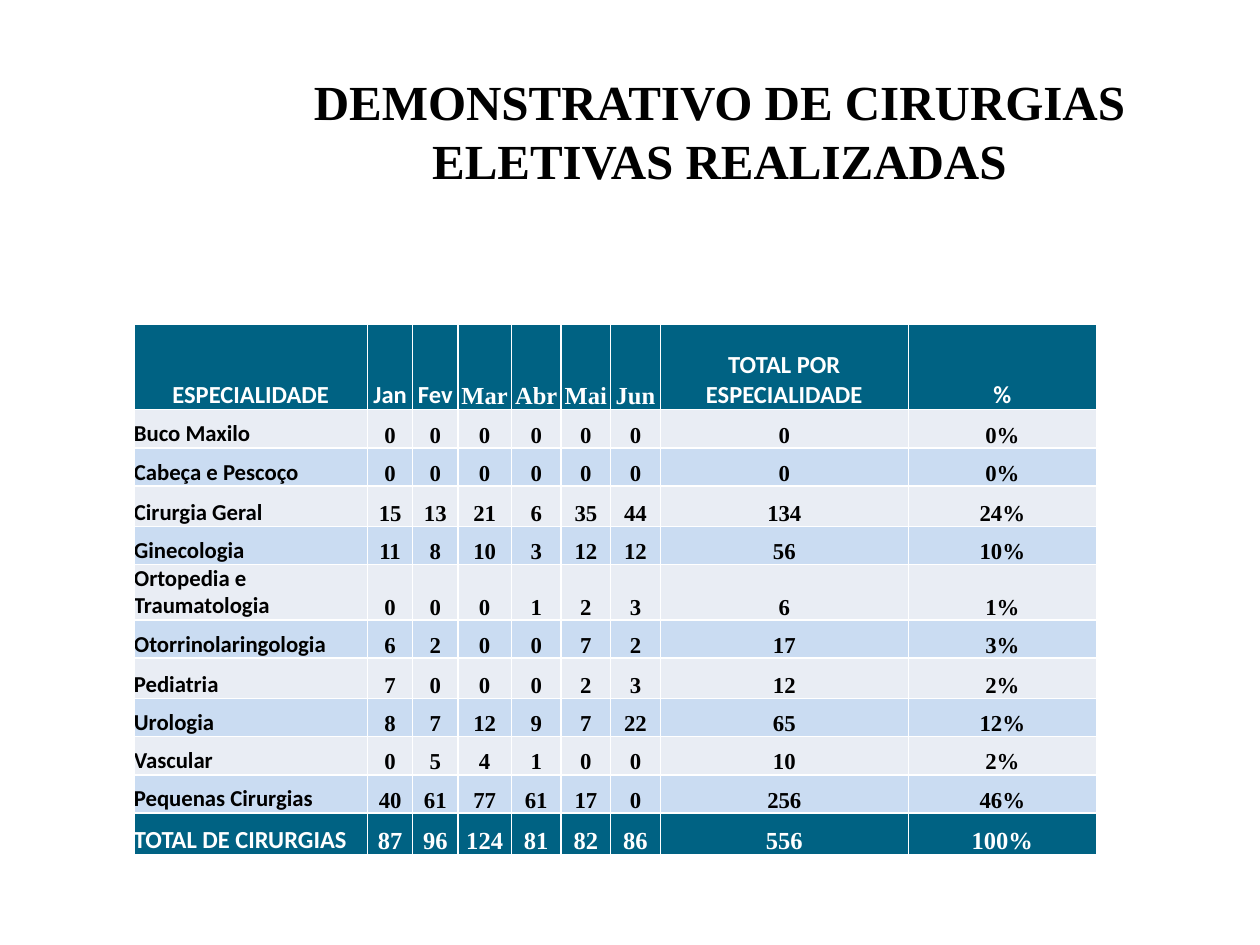
from lxml import etree
from pptx import Presentation
from pptx.dml.color import RGBColor
from pptx.enum.text import MSO_ANCHOR, MSO_AUTO_SIZE, PP_ALIGN
from pptx.oxml.ns import qn
from pptx.util import Cm, Pt

LEFT, MID = PP_ALIGN.LEFT, PP_ALIGN.CENTER
TOP, LOW = MSO_ANCHOR.TOP, MSO_ANCHOR.BOTTOM
NO_FIT = MSO_AUTO_SIZE.NONE
SANS, SERIF = "Calibri", "Times New Roman"
COLORS = {
    "teal": "006283",
    "pale": "E9EDF4",
    "blue": "CADCF2",
    "white": "FFFFFF",
    "black": "000000",
}
TITLE = "DEMONSTRATIVO DE CIRURGIAS ELETIVAS REALIZADAS"
MONTHS = ["Mar", "Abr", "Mai", "Jun"]
ROWS = [
    ["ESPECIALIDADE", "Jan", "Fev", *MONTHS, "TOTAL POR ESPECIALIDADE", "%"],
    ["Buco Maxilo", 0, 0, 0, 0, 0, 0, 0, "0%"],
    ["Cabeça e Pescoço", 0, 0, 0, 0, 0, 0, 0, "0%"],
    ["Cirurgia Geral", 15, 13, 21, 6, 35, 44, 134, "24%"],
    ["Ginecologia", 11, 8, 10, 3, 12, 12, 56, "10%"],
    ["Ortopedia e Traumatologia", 0, 0, 0, 1, 2, 3, 6, "1%"],
    ["Otorrinolaringologia", 6, 2, 0, 0, 7, 2, 17, "3%"],
    ["Pediatria", 7, 0, 0, 0, 2, 3, 12, "2%"],
    ["Urologia", 8, 7, 12, 9, 7, 22, 65, "12%"],
    ["Vascular", 0, 5, 4, 1, 0, 0, 10, "2%"],
    ["Pequenas Cirurgias", 40, 61, 77, 61, 17, 0, 256, "46%"],
    ["TOTAL DE CIRURGIAS", 87, 96, 124, 81, 82, 86, 556, "100%"],
]
WIDTHS = [4.71, 0.91, 0.91, 1.08, 1, 1, 1, 5, 3.79]
HEIGHTS = [1.73, 0.77, 0.77, 0.81, 0.77, 1.11, 0.77, 0.81, 0.77, 0.77, 0.77, 0.84]


def color(name):
    """Return a palette color."""
    return RGBColor.from_string(COLORS[name])


def style(para, face, size, ink, align):
    """Format a bold paragraph."""
    para.alignment = align
    font = para.font
    font.name, font.size, font.bold = face, Pt(size), True
    font.color.rgb = color(ink)


def add_title(slide):
    """Fill and place the title."""
    box = slide.shapes.title
    box.left, box.top, box.width, box.height = Cm(4.3), Cm(1.32), Cm(20.4), Cm(2.64)
    frame = box.text_frame
    frame.text = TITLE
    frame.word_wrap = True
    frame.auto_size = NO_FIT
    frame.vertical_anchor = TOP
    style(frame.paragraphs[0], SERIF, 28, "black", MID)


def add_rules(cell):
    """Draw white borders around a cell."""
    props = cell._tc.get_or_add_tcPr()
    for side in ("lnL", "lnR", "lnT", "lnB"):
        line = etree.SubElement(props, qn(f"a:{side}"), w=str(Pt(1)))
        fill = etree.SubElement(line, qn("a:solidFill"))
        etree.SubElement(fill, qn("a:srgbClr"), val=COLORS["white"])


def fill_cell(cell, value, row, col):
    """Write and format one cell by its position."""
    head = row == 0
    edge = head or row == len(ROWS) - 1
    cell.margin_left = cell.margin_right = cell.margin_top = cell.margin_bottom = 0
    cell.vertical_anchor = LOW
    add_rules(cell)
    cell.fill.solid()
    cell.fill.fore_color.rgb = color("teal" if edge else ("blue", "pale")[row % 2])
    cell.text = str(value)
    sans = col == 0 or head and value not in MONTHS
    style(
        cell.text_frame.paragraphs[0],
        SANS if sans else SERIF,
        14 if edge else 13,
        "white" if edge else "black",
        LEFT if col == 0 and not head else MID,
    )


def add_grid(slide):
    """Build the table of surgeries."""
    size = Cm(sum(WIDTHS)), Cm(sum(HEIGHTS))
    frame = slide.shapes.add_table(len(ROWS), len(WIDTHS), Cm(2.7), Cm(6.53), *size)
    table = frame.table
    table.first_row = table.horz_banding = False
    for col, width in zip(table.columns, WIDTHS):
        col.width = Cm(width)
    for line, height in zip(table.rows, HEIGHTS):
        line.height = Cm(height)
    for row, values in enumerate(ROWS):
        for col, value in enumerate(values):
            fill_cell(table.cell(row, col), value, row, col)


def main():
    """Build and save the slide."""
    deck = Presentation()
    deck.slide_width, deck.slide_height = Cm(25.4), Cm(19.05)
    slide = deck.slides.add_slide(deck.slide_layouts[5])
    add_grid(slide)
    add_title(slide)
    deck.save("out.pptx")


if __name__ == "__main__":
    main()
